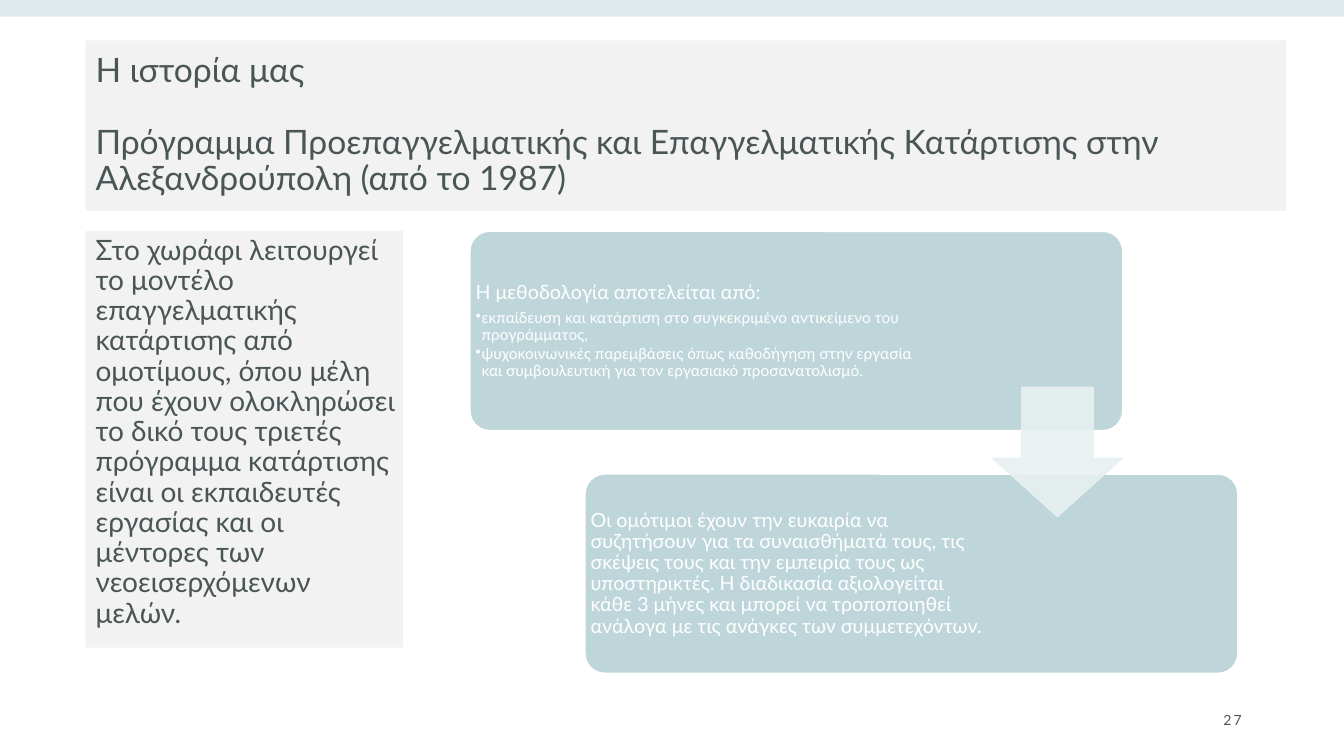
import pptx
import pptx.util
import pptx.dml.color
import pptx.enum.shapes
import pptx.enum.text
import pptx.oxml.ns
import lxml.etree

RGB = pptx.dml.color.RGBColor
KIND = pptx.enum.shapes.MSO_SHAPE
ANCHOR = pptx.enum.text.MSO_ANCHOR
ALIGN = pptx.enum.text.PP_ALIGN
Pt = pptx.util.Pt
Inches = pptx.util.Inches

INK = RGB(0x4A, 0x56, 0x56)
WHITE = RGB(0xFF, 0xFF, 0xFF)
PANEL = RGB(0xF2, 0xF2, 0xF2)
TEAL = RGB(0xBE, 0xD6, 0xDA)
PALE = RGB(0xE8, 0xF0, 0xF1)

COLS, ROWS = 160, 90


class Deck:
    """Style and current slide; boxes are (column, row, columns, rows)."""

    font = "Lato"
    leading = 0.9

    def __init__(self):
        self.prs = pptx.Presentation()
        self.prs.slide_width = Inches(13.333)
        self.prs.slide_height = Inches(7.5)
        self.slide = self.prs.slides.add_slide(self.prs.slide_layouts[6])

    def place(self, box):
        wide = self.prs.slide_width / COLS
        high = self.prs.slide_height / ROWS
        return [round(n * unit) for n, unit in zip(box, (wide, high) * 2)]

    def fade(self, item, share):
        """Set the opacity of fill and line, in percent."""
        tag = pptx.oxml.ns.qn("a:srgbClr")
        for color in item.element.spPr.iter(tag):
            alpha = lxml.etree.SubElement(color, pptx.oxml.ns.qn("a:alpha"))
            alpha.set("val", str(share * 1000))

    def shape(self, kind, box, color, edge=None, width=1, adjust=(), share=100):
        item = self.slide.shapes.add_shape(kind, *self.place(box))
        item.shadow.inherit = False
        item.fill.solid()
        item.fill.fore_color.rgb = color
        for i, value in enumerate(adjust):
            item.adjustments[i] = value
        if edge is None:
            item.line.fill.background()
        else:
            item.line.color.rgb = edge
            item.line.width = Pt(width)
        if share < 100:
            self.fade(item, share)
        return item

    def label(self, box):
        return self.slide.shapes.add_textbox(*self.place(box))

    def frame(self, item, anchor, inset=(0.1, 0.05, 0.1, 0.05)):
        frame = item.text_frame
        frame.word_wrap = True
        frame.vertical_anchor = anchor
        (frame.margin_left, frame.margin_top,
         frame.margin_right, frame.margin_bottom) = map(Inches, inset)
        return frame

    def say(self, frame, text, size, color, align=ALIGN.LEFT, after=0,
            bullet=False, track=0):
        """Add a paragraph; the first call fills the one already there."""
        first = frame.paragraphs[0]
        par = frame.add_paragraph() if first.runs else first
        par.alignment = align
        par.line_spacing = self.leading
        par.space_after = Pt(after)
        if bullet:
            props = par._p.get_or_add_pPr()
            props.set("marL", str(Inches(0.06)))
            props.set("indent", str(-Inches(0.06)))
            mark = lxml.etree.SubElement(props, pptx.oxml.ns.qn("a:buChar"))
            mark.set("char", "•")
        run = par.add_run()
        run.text = text
        run.font.name = self.font
        run.font.size = Pt(size)
        run.font.color.rgb = color
        if track:
            run._r.get_or_add_rPr().set("spc", str(round(track * 100)))


def main():
    deck = Deck()
    left, top = 10.2, 27.5
    deck.shape(KIND.RECTANGLE, (0, 0, COLS, 2), TEAL, share=50)

    title = deck.shape(KIND.RECTANGLE, (left, 4.8, 142.9, 20.3), PANEL)
    frame = deck.frame(title, ANCHOR.MIDDLE)
    deck.say(frame, "Η ιστορία μας", 24, INK, after=26)
    deck.say(frame, "Πρόγραμμα Προεπαγγελματικής και Επαγγελματικής "
             "Κατάρτισης στην Αλεξανδρούπολη (από το 1987)", 24, INK)

    model = deck.shape(KIND.RECTANGLE, (left, top, 37.8, 49.6), PANEL)
    frame = deck.frame(model, ANCHOR.TOP, (0.1, 0.05, 0.05, 0.05))
    deck.say(frame, "Στο χωράφι λειτουργεί το μοντέλο επαγγελματικής "
             "κατάρτισης από ομοτίμους, όπου μέλη που έχουν ολοκληρώσει "
             "το δικό τους τριετές πρόγραμμα κατάρτισης είναι οι "
             "εκπαιδευτές εργασίας και οι μέντορες των νεοεισερχόμενων "
             "μελών.", 20, INK)

    number = deck.frame(deck.label((113, 83.4, 36, 4.8)), ANCHOR.MIDDLE)
    deck.say(number, "27", 10, INK, align=ALIGN.RIGHT, track=1.5)

    steps = [
        (54.6, "Η μεθοδολογία αποτελείται από:",
         ["εκπαίδευση και κατάρτιση στο συγκεκριμένο αντικείμενο του "
          "προγράμματος,",
          "ψυχοκοινωνικές παρεμβάσεις όπως καθοδήγηση στην εργασία και "
          "συμβουλευτική για τον εργασιακό προσανατολισμό."]),
        (48.6, "Οι ομότιμοι έχουν την ευκαιρία να συζητήσουν για τα "
         "συναισθήματά τους, τις σκέψεις τους και την εμπειρία τους ως "
         "υποστηρικτές. Η διαδικασία αξιολογείται κάθε 3 μήνες και μπορεί "
         "να τροποποιηθεί ανάλογα με τις ανάγκες των συμμετεχόντων.", []),
    ]
    for i, (wide, head, points) in enumerate(steps):
        col, row, high = 55.9 + 13.7 * i, top + 28.9 * i, 23.8
        deck.shape(KIND.ROUNDED_RECTANGLE, (col, row, 77.8, high), TEAL,
                   edge=WHITE, width=1.5, adjust=[0.1])
        frame = deck.frame(deck.label((col, row, wide, high)),
                           ANCHOR.MIDDLE, (0.06,) * 4)
        deck.say(frame, head, 14, WHITE, after=5)
        for point in points:
            deck.say(frame, point, 11, WHITE, after=1.7, bullet=True)

    deck.shape(KIND.DOWN_ARROW, (118.2, 46.1, 15.4, 15.4), PALE,
               edge=PALE, adjust=[0.55, 0.45], share=90)

    deck.prs.save("out.pptx")


if __name__ == "__main__":
    main()
